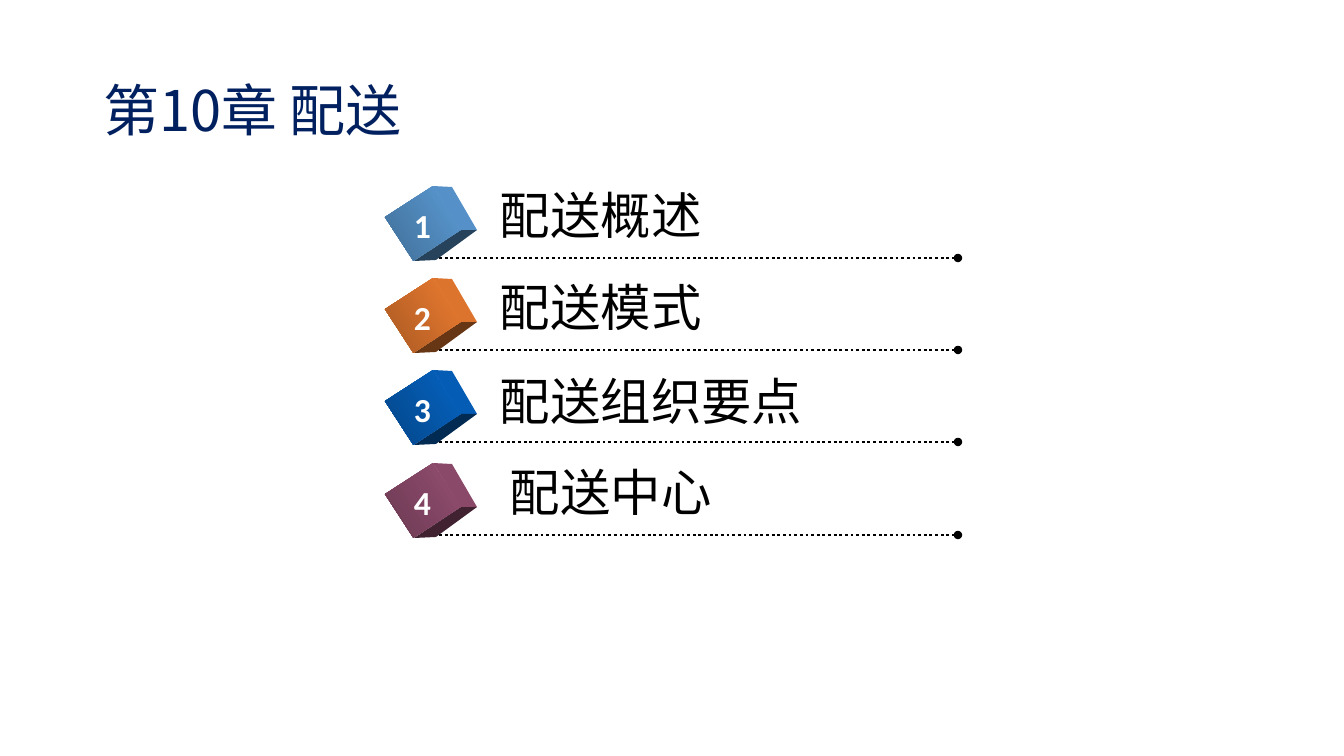
"""Chapter contents slide: four numbered cubes with dotted rules."""
from dataclasses import dataclass

from lxml.etree import SubElement
from pptx import Presentation
from pptx.dml.color import RGBColor
from pptx.enum.dml import MSO_LINE
from pptx.enum.shapes import MSO_CONNECTOR as CONNECTOR, MSO_SHAPE as SHAPE
from pptx.enum.text import MSO_ANCHOR as ANCHOR, MSO_AUTO_SIZE as AUTO, PP_ALIGN as ALIGN
from pptx.oxml.ns import qn
from pptx.util import Emu, Pt

TITLE = "第10章 配送"
TOPICS = [
    {"name": "配送概述", "at": (490, 79), "width": 222, "colors": ("5B9BD5", "416F98", "5590C8", "27435B")},
    {"name": "配送模式", "at": (490, 79), "width": 222, "colors": ("ED7D31", "AA5923", "DD742D", "663615")},
    {"name": "配送组织要点", "at": (490, 77), "width": 323, "colors": ("0563C1", "04478A", "055CB4", "022B53")},
    {"name": "配送中心", "at": (500, 79), "width": 222, "colors": ("954F72", "6B3952", "8B496A", "402231")},
]
SIDE_FACE = [(433, -72), (452, -71), (477, -28), (461, -28)]
BASE_FACE = [(414, 3), (461, -28), (477, -28), (436, 2)]
FIRST_RULE, RULE_SPAN = 258, 277
RULE_LEFT, RULE_RIGHT = 428, 958
SCALE = 914400 / 100.8


@dataclass(frozen=True)
class Theme:
    title: str = "002060"
    ink: str = "000000"
    number: str = "FFFFFF"
    title_font: str = "Noto Sans CJK JP"
    topic_font: str = "Noto Sans CJK SC"
    number_font: str = "Calibri"
    title_size: int = 40
    topic_size: int = 36
    number_size: int = 24


THEME = Theme()


def px(length):
    return Emu(round(length * SCALE))


def rgb(code):
    return RGBColor.from_string(code)


def write(box, text, font, size, color, bold=False):
    para = box.text_frame.paragraphs[0]
    para.text = text
    span = para.runs[0]
    span.font.size, span.font.bold = Pt(size), bold
    span.font.color.rgb = rgb(color)
    span.font.name = font
    SubElement(span.font._element, qn("a:ea"), typeface=font)
    return para


def add_label(page, area, *style, bold=False, align=ALIGN.LEFT):
    box = page.shapes.add_textbox(*map(px, area))
    box.text_frame.word_wrap = False
    box.text_frame.auto_size = AUTO.SHAPE_TO_FIT_TEXT
    write(box, *style, bold=bold).alignment = align


def add_rule(page, y):
    rule = page.shapes.add_connector(CONNECTOR.STRAIGHT, px(RULE_LEFT), px(y), px(RULE_RIGHT), px(y))
    rule.line.color.rgb = rgb(THEME.ink)
    rule.line.width = Pt(2)
    rule.line.dash_style = MSO_LINE.ROUND_DOT
    SubElement(rule.line._get_or_add_ln(), qn("a:tailEnd"), type="oval")
    SubElement(rule._element.spPr, qn("a:effectLst"))


def add_face(page, points, y, color):
    corners = [(px(x), px(y + rise)) for x, rise in points]
    builder = page.shapes.build_freeform(*corners[0])
    builder.add_line_segments(corners[1:], close=True)
    face = builder.convert_to_shape()
    face.shadow.inherit = False
    face.fill.solid()
    face.fill.fore_color.rgb = rgb(color)
    face.line.fill.background()


def add_cube(page, y, colors):
    light, dark, side, base = colors
    add_face(page, SIDE_FACE, y, side)
    add_face(page, BASE_FACE, y, base)
    front = page.shapes.add_shape(SHAPE.RECTANGLE, px(397), px(y - 63), px(52), px(57))
    front.rotation = 57
    front.shadow.inherit = False
    front.line.fill.background()
    front.fill.gradient()
    front.fill.gradient_angle = 270
    for stop, color, position in zip(front.fill.gradient_stops, (light, dark), (0, 1)):
        stop.color.rgb = rgb(color)
        stop.position = position


def main():
    deck = Presentation()
    deck.slide_width, deck.slide_height = px(1344), px(756)
    page = deck.slides.add_slide(deck.slide_layouts[5])

    title = page.shapes.title
    title.left, title.top, title.width, title.height = map(px, (93, 40, 1159, 146))
    title.text_frame.vertical_anchor = ANCHOR.MIDDLE
    para = write(title, TITLE, THEME.title_font, THEME.title_size, THEME.title)
    para.alignment = ALIGN.LEFT
    para.line_spacing = 0.9

    for index, topic in enumerate(TOPICS):
        y = FIRST_RULE + index * RULE_SPAN // (len(TOPICS) - 1)
        left, rise = topic["at"]
        add_rule(page, y)
        add_cube(page, y, topic["colors"])
        add_label(page, (404, y - 58, 37, 50), str(index + 1), THEME.number_font,
                  THEME.number_size, THEME.number, bold=True, align=ALIGN.CENTER)
        add_label(page, (left, y - rise, topic["width"], 72), topic["name"],
                  THEME.topic_font, THEME.topic_size, THEME.ink)

    deck.save("out.pptx")


if __name__ == "__main__":
    main()
